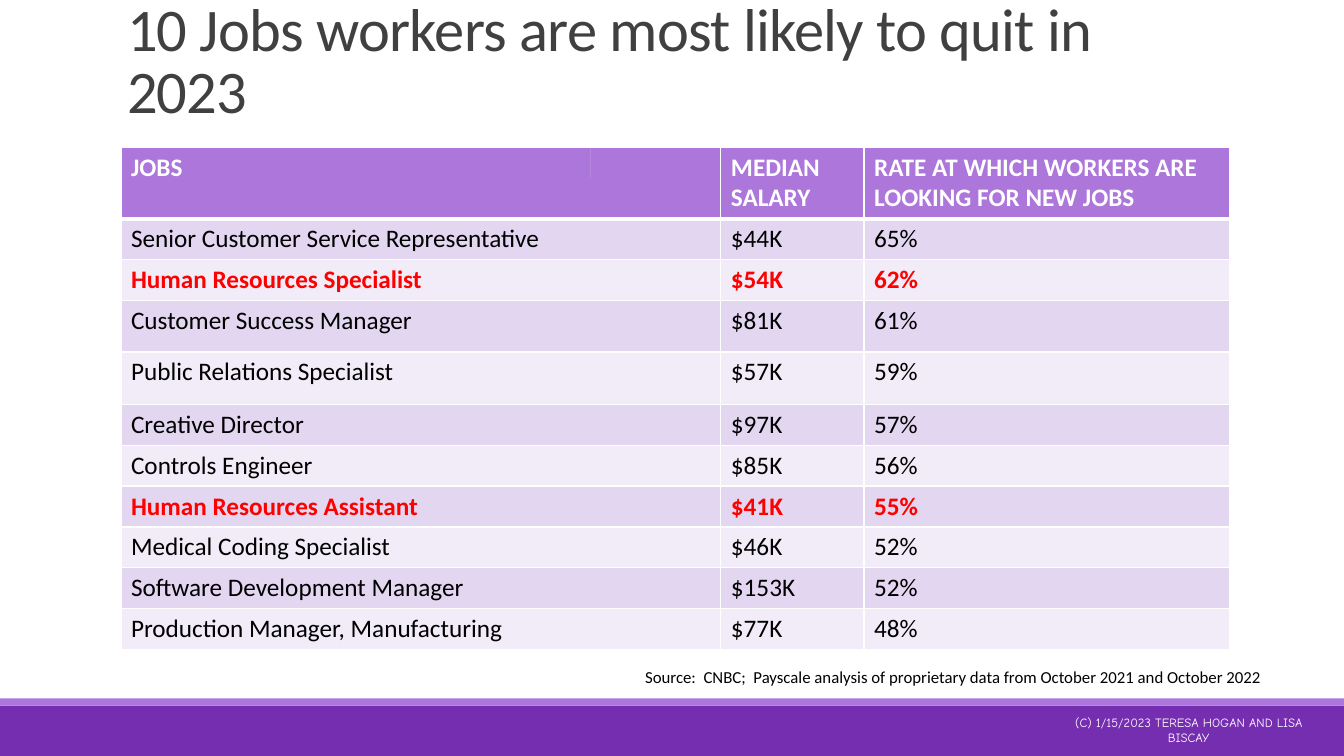
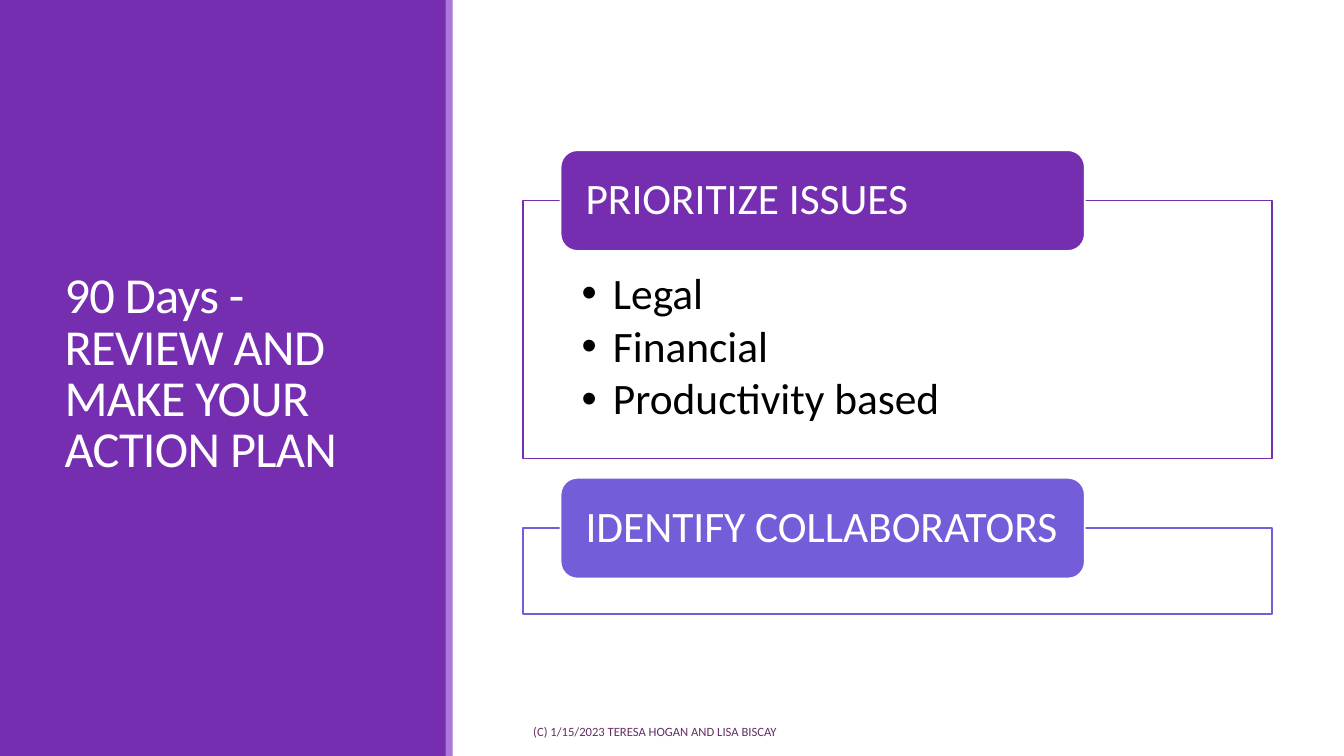
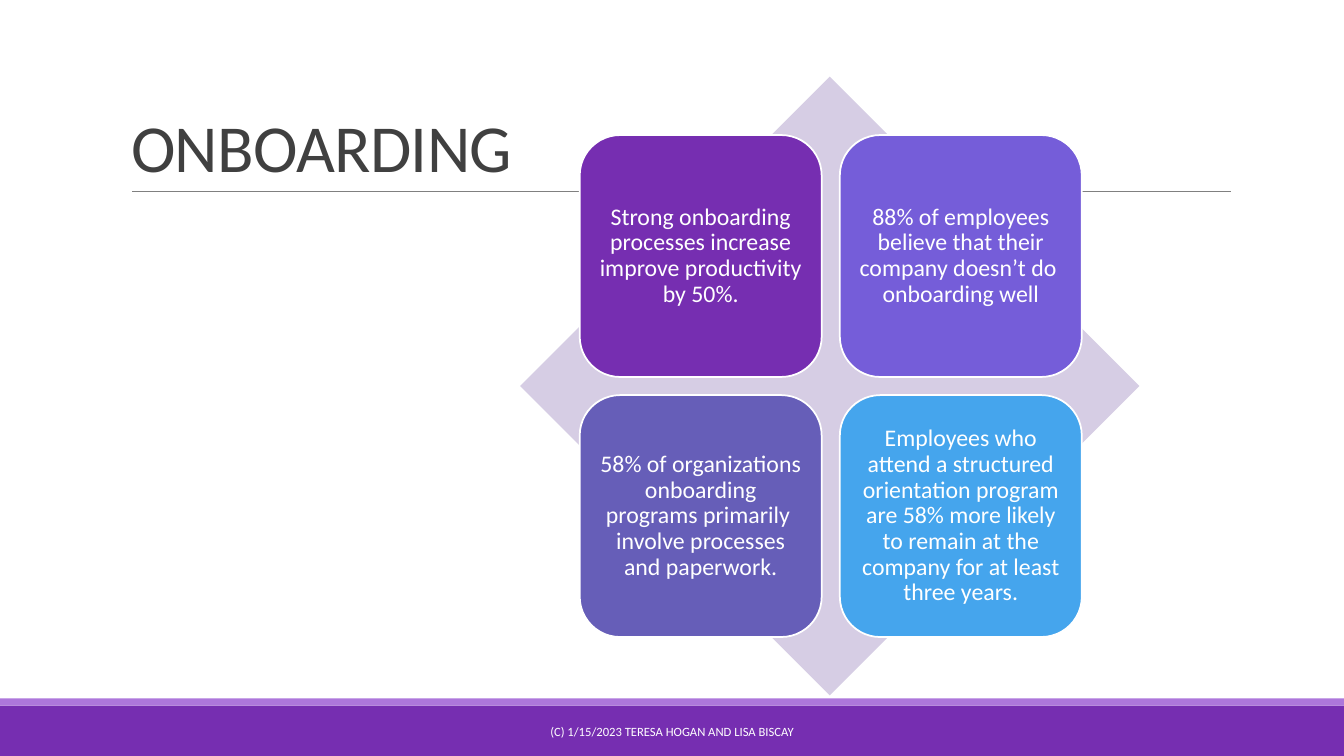
from lxml import etree
from pptx import Presentation
from pptx.dml.color import RGBColor
from pptx.enum.shapes import MSO_CONNECTOR, MSO_SHAPE
from pptx.enum.text import MSO_ANCHOR, MSO_AUTO_SIZE, PP_ALIGN
from pptx.oxml.ns import qn
from pptx.util import Inches, Pt

RECTANGLE, ROUNDED, DIAMOND = MSO_SHAPE.RECTANGLE, MSO_SHAPE.ROUNDED_RECTANGLE, MSO_SHAPE.DIAMOND
TOP, MIDDLE, BOTTOM = MSO_ANCHOR.TOP, MSO_ANCHOR.MIDDLE, MSO_ANCHOR.BOTTOM
LEFT, CENTER = PP_ALIGN.LEFT, PP_ALIGN.CENTER
STRAIGHT = MSO_CONNECTOR.STRAIGHT
NO_AUTOFIT = MSO_AUTO_SIZE.NONE
TITLE_ONLY = 5

# Shared look
COLORS = {
    "white": "FFFFFF", "black": "000000", "red": "FF0000", "title": "404040",
    "rule": "808080", "purple": "762EB1", "lilac": "AD76DB", "violet": "755DD9",
    "indigo": "665EB8", "blue": "45A5ED", "diamond": "D6CDE4", "plum": "632E62",
    "row_dark": "E3D6F1", "row_light": "F1ECF8",
}
FONT = "Calibri"
FOOTER_FONT = "Comic Neue"
BULLET_FONT = "Arial"
SLIDE_WIDTH, SLIDE_HEIGHT = 13.33, 7.5
DEFAULT_INSETS = (0.1, 0.05, 0.1, 0.05)
FOOTER = "(C) 1/15/2023 TERESA HOGAN AND LISA BISCAY"

# Slide 1 content
JOBS_TITLE = "10 Jobs workers are most likely to quit in 2023"
JOBS_HEADER = ("JOBS", "MEDIAN SALARY", "RATE AT WHICH WORKERS ARE LOOKING FOR NEW JOBS")
JOBS = [
    ("Senior Customer Service Representative", "$44K", "65%"),
    ("Human Resources Specialist", "$54K", "62%"),
    ("Customer Success Manager", "$81K", "61%"),
    ("Public Relations Specialist", "$57K", "59%"),
    ("Creative Director", "$97K", "57%"),
    ("Controls Engineer", "$85K", "56%"),
    ("Human Resources Assistant", "$41K", "55%"),
    ("Medical Coding Specialist", "$46K", "52%"),
    ("Software Development Manager", "$153K", "52%"),
    ("Production Manager, Manufacturing", "$77K", "48%"),
]
HIGHLIGHT = "Human Resources"
COLUMN_WIDTHS = (5.95, 1.42, 3.63)
HEADER_HEIGHT, ROW_HEIGHT = 0.7, 0.4
TALL_ROWS = {3: 0.51, 4: 0.52}
JOBS_SOURCE = ("Source:  CNBC;  Payscale analysis of proprietary data "
               "from October 2021 and October 2022")

# Slide 2 content: heading, bullets, color, frame top, frame height
PLAN_TITLE = "90 Days - REVIEW AND MAKE YOUR ACTION PLAN"
PLAN_STEPS = [
    ("PRIORITIZE ISSUES", ["Legal", "Financial", "Productivity based"], "purple", 1.99, 2.56),
    ("IDENTIFY COLLABORATORS", [], "violet", 5.24, 0.85),
]

# Slide 3 content
ONBOARDING_TITLE = "ONBOARDING"
ONBOARDING_FACTS = [
    ("Strong onboarding processes increase improve productivity by 50%.", "purple"),
    ("88% of employees believe that their company doesn’t do  onboarding well", "violet"),
    ("58% of organizations onboarding programs primarily  involve processes and paperwork.",
     "indigo"),
    ("Employees who attend a structured orientation program are 58% more likely "
     "to remain at the company for at least three years.", "blue"),
]


def rgb(name):
    return RGBColor.from_string(COLORS[name])


def style_font(target, size, color, bold=False, font=FONT):
    for name, value in {"name": font, "size": Pt(size), "bold": bold}.items():
        setattr(target, name, value)
    target.color.rgb = rgb(color)


def write(frame, lines, size, color, bold=False, font=FONT, align=LEFT, anchor=TOP,
          insets=DEFAULT_INSETS, spacing=1.0, after=0, bullet_indent=None):
    frame_format = {"word_wrap": True, "auto_size": NO_AUTOFIT, "vertical_anchor": anchor}
    for side, inset in zip(("left", "top", "right", "bottom"), insets):
        frame_format["margin_" + side] = Inches(inset)
    for name, value in frame_format.items():
        setattr(frame, name, value)
    for index, line in enumerate(lines):
        paragraph = frame.add_paragraph() if index else frame.paragraphs[0]
        paragraph_format = {"alignment": align, "line_spacing": spacing,
                            "space_before": Pt(0), "space_after": Pt(after)}
        for name, value in paragraph_format.items():
            setattr(paragraph, name, value)
        if bullet_indent:
            properties = paragraph._p.get_or_add_pPr()
            properties.set("marL", str(Inches(bullet_indent)))
            properties.set("indent", str(-Inches(bullet_indent)))
            etree.SubElement(properties, qn("a:buFont"), typeface=BULLET_FONT)
            etree.SubElement(properties, qn("a:buChar"), char="•")
        run = paragraph.add_run()
        run.text = line
        style_font(run.font, size, color, bold, font)


def add_box(slide, kind, place, fill, line=None):
    shape = slide.shapes.add_shape(kind, *map(Inches, place))
    shape.shadow.inherit = False
    shape.fill.solid()
    shape.fill.fore_color.rgb = rgb(fill)
    if line:
        shape.line.color.rgb = rgb(line)
        shape.line.width = Pt(1.25)
    else:
        shape.line.fill.background()
    return shape


def add_text(slide, place, text, size, color, **options):
    box = slide.shapes.add_textbox(*map(Inches, place))
    write(box.text_frame, [text], size, color, **options)


def add_bands(slide):
    add_box(slide, RECTANGLE, (0, 7, SLIDE_WIDTH, 0.5), "purple")
    add_box(slide, RECTANGLE, (0, 6.93, SLIDE_WIDTH, 0.07), "lilac")


def set_title(slide, place, text, size, color="title", anchor=BOTTOM):
    title = slide.shapes.title
    title.left, title.top, title.width, title.height = map(Inches, place)
    write(title.text_frame, [text], size, color, anchor=anchor, spacing=0.85)
    title.text_frame.paragraphs[0].runs[0].font._element.set("spc", "-50")
    # Bring the title in front of the background shapes
    slide.shapes._spTree.append(title._element)


def set_cell(cell, text, fill, color, bold, bottom_width):
    properties = cell._tc.get_or_add_tcPr()
    for side, width in (("L", 1), ("R", 1), ("T", 1), ("B", bottom_width)):
        border = etree.SubElement(properties, qn("a:ln" + side), w=str(Pt(width)))
        solid = etree.SubElement(border, qn("a:solidFill"))
        etree.SubElement(solid, qn("a:srgbClr"), val=COLORS["white"])
    cell.fill.solid()
    cell.fill.fore_color.rgb = rgb(fill)
    cell.text = text
    style_font(cell.text_frame.paragraphs[0].runs[0].font, 18, color, bold)


def build_jobs(slide):
    add_bands(slide)
    set_title(slide, (1.16, 0.33, 11, 0.97), JOBS_TITLE, 43.2)

    # Table of jobs
    rows = [JOBS_HEADER] + JOBS
    heights = [HEADER_HEIGHT] + [TALL_ROWS.get(row, ROW_HEIGHT) for row in range(1, len(rows))]
    place = (1.2, 1.46, sum(COLUMN_WIDTHS), sum(heights))
    table = slide.shapes.add_table(len(rows), len(COLUMN_WIDTHS), *map(Inches, place)).table
    for column, width in zip(table.columns, COLUMN_WIDTHS):
        column.width = Inches(width)
    for index, (values, height) in enumerate(zip(rows, heights)):
        table.rows[index].height = Inches(height)
        marked = values[0].startswith(HIGHLIGHT)
        if index == 0:
            look = ("lilac", "white", True, 3)
        else:
            look = ("row_dark" if index % 2 else "row_light",
                    "red" if marked else "black", marked, 1)
        for cell, text in zip(table.rows[index].cells, values):
            set_cell(cell, text, *look)

    # Footer, header tick and source line
    add_text(slide, (10.36, 7.07, 2.86, 0.34), FOOTER, 9, "white",
             font=FOOTER_FONT, align=CENTER, anchor=MIDDLE)
    add_box(slide, RECTANGLE, (5.86, 1.46, 0, 0.3), "white")
    add_text(slide, (6.3, 6.57, 6.63, 0.3), JOBS_SOURCE, 12, "black")


def build_plan(slide):
    # Side panel
    add_box(slide, RECTANGLE, (0, 0, 4.43, SLIDE_HEIGHT), "purple")
    add_box(slide, RECTANGLE, (4.42, 0, 0.07, SLIDE_HEIGHT), "lilac")
    set_title(slide, (0.54, 0.57, 3.37, 6.31), PLAN_TITLE, 36, "white", MIDDLE)
    add_text(slide, (5.19, 7.06, 5.58, 0.4), FOOTER, 9, "plum", anchor=MIDDLE)

    # Frames with a heading across the top edge
    for heading, bullets, color, top, height in PLAN_STEPS:
        frame = add_box(slide, RECTANGLE, (5.19, top, 7.43, height), "white", color)
        write(frame.text_frame, bullets, 31, "black", insets=(0.58, 0.71, 0.58, 0.24),
              spacing=0.9, after=4, bullet_indent=0.31)
        label = add_box(slide, ROUNDED, (5.56, top - 0.5, 5.2, 1), color, "white")
        write(label.text_frame, [heading], 31, "white", anchor=MIDDLE,
              insets=(0.2, 0, 0.1, 0), spacing=0.9)


def build_onboarding(slide):
    add_bands(slide)
    rule = slide.shapes.add_connector(STRAIGHT, *map(Inches, (1.31, 1.9, 12.21, 1.9)))
    rule.line.color.rgb = rgb("rule")
    rule.line.width = Pt(0.5)
    etree.SubElement(rule._element.spPr, qn("a:effectLst"))
    set_title(slide, (1.2, 0.31, 11, 1.59), ONBOARDING_TITLE, 48)
    add_text(slide, (4.03, 7.06, 5.27, 0.4), FOOTER, 9, "white", align=CENTER, anchor=MIDDLE)

    # Diamond with a two by two grid of facts
    add_box(slide, DIAMOND, (5.16, 0.76, 6.14, 6.14), "diamond")
    tile, pitch = 2.4, 2.58
    for index, (fact, color) in enumerate(ONBOARDING_FACTS):
        row, column = divmod(index, 2)
        place = (5.75 + column * pitch, 1.34 + row * pitch, tile, tile)
        shape = add_box(slide, ROUNDED, place, color, "white")
        write(shape.text_frame, [fact], 17, "white", align=CENTER, anchor=MIDDLE,
              insets=(0.07,) * 4, spacing=0.9)


def main():
    presentation = Presentation()
    presentation.slide_width = Inches(SLIDE_WIDTH)
    presentation.slide_height = Inches(SLIDE_HEIGHT)
    for build in (build_jobs, build_plan, build_onboarding):
        build(presentation.slides.add_slide(presentation.slide_layouts[TITLE_ONLY]))
    presentation.save("out.pptx")


if __name__ == "__main__":
    main()
